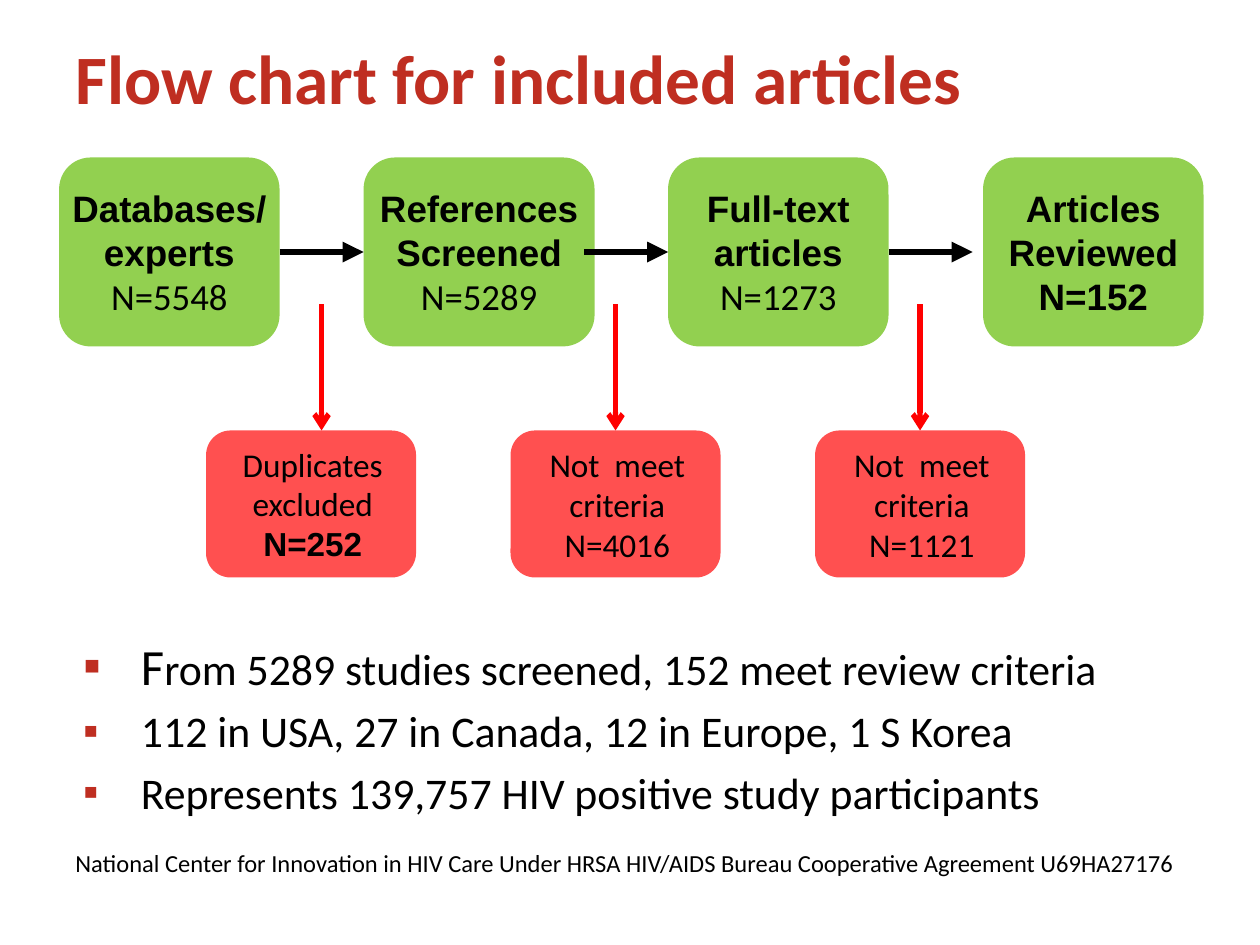
import pptx
import pptx.dml.color
import pptx.enum.shapes
import pptx.enum.text
import pptx.oxml.ns
import pptx.util
from lxml import etree

Pt = pptx.util.Pt
ANCHOR = pptx.enum.text.MSO_ANCHOR
ALIGN = pptx.enum.text.PP_ALIGN
BRAND_RED = "BF2E21"
BLACK = "000000"
STEP = 174


def color(hex_code):
    return pptx.dml.color.RGBColor.from_string(hex_code)


def style_run(run, size, font="Calibri", bold=False, hex_code=BLACK):
    run.font.size = Pt(size)
    run.font.name = font
    run.font.bold = bold
    run.font.color.rgb = color(hex_code)


def add_text_area(slide, box, anchor=ANCHOR.TOP):
    area = slide.shapes.add_textbox(*map(Pt, box))
    frame = area.text_frame
    frame.word_wrap = True
    frame.vertical_anchor = anchor
    return frame


def add_step(slide, box, lines, fill, size, side_inset=2, anchor=ANCHOR.MIDDLE, wrap=True):
    step = slide.shapes.add_shape(
        pptx.enum.shapes.MSO_SHAPE.ROUNDED_RECTANGLE, *map(Pt, box))
    step.shadow.inherit = False
    step.fill.solid()
    step.fill.fore_color.rgb = color(fill)
    step.line.fill.background()
    frame = step.text_frame
    frame.word_wrap = wrap
    frame.vertical_anchor = anchor
    frame.margin_left, frame.margin_right = Pt(side_inset), Pt(2)
    frame.text = "\n".join(text for text, bold in lines)
    for paragraph, (text, bold) in zip(frame.paragraphs, lines):
        paragraph.alignment = ALIGN.CENTER
        style_run(paragraph.runs[0], size, "Arial" if bold else "Calibri", bold)


def add_arrow(slide, start, end, hex_code, width, head):
    arrow = slide.shapes.add_connector(
        pptx.enum.shapes.MSO_CONNECTOR.STRAIGHT, *map(Pt, start + end))
    arrow.line.color.rgb = color(hex_code)
    arrow.line.width = Pt(width)
    qn = pptx.oxml.ns.qn
    etree.SubElement(arrow.line._get_or_add_ln(), qn("a:tailEnd"), type=head)
    etree.SubElement(arrow._element.spPr, qn("a:effectLst"))


def add_title(slide, box):
    frame = add_text_area(slide, box, ANCHOR.BOTTOM)
    frame.margin_bottom = Pt(44)
    frame.text = "Flow chart for included articles"
    style_run(frame.paragraphs[0].runs[0], 39.6, bold=True, hex_code=BRAND_RED)


def add_flow(slide, box):
    left, top, width, height = box
    stages = [
        (0, 126, [("Databases/", True), ("experts", True), ("N=5548", False)]),
        (STEP, 132, [("References", True), ("Screened", True), ("N=5289", False)]),
        (2 * STEP, 126, [("Full-text articles", True), ("N=1273", False)]),
        (width - 126, 126, [("Articles Reviewed N=152", True)]),
    ]
    for index, (offset, stage_width, lines) in enumerate(stages):
        add_step(slide, (left + offset, top, stage_width, 108), lines,
                 "92D050", 21, wrap=index > 0)

    exclusions = [
        ([("Duplicates excluded", False), ("N=252", True)], 150, ANCHOR.TOP),
        ([("Not  meet criteria", False), ("N=4016", False)], 318, ANCHOR.MIDDLE),
        ([("Not  meet criteria", False), ("N=1121", False)], 492, ANCHOR.MIDDLE),
    ]
    exclusion_top = top + height - 84
    for index, (lines, drop, anchor) in enumerate(exclusions):
        offset = left + index * STEP
        add_step(slide, (offset + 84, exclusion_top, 120, 84), lines,
                 "FF5050", 19, 4, anchor)
        add_arrow(slide, (offset + 126, top + 54), (offset + STEP, top + 54),
                  BLACK, 4, "triangle")
        add_arrow(slide, (left + drop, top + 84), (left + drop, exclusion_top),
                  "FF0000", 3, "arrow")


def add_findings(slide, box):
    findings = [
        ["F", "rom 5289 studies screened, 152 meet review criteria"],
        ["112 in USA, 27 in Canada, 12 in Europe, 1 S Korea"],
        ["Represents 139,757 HIV positive study participants"],
    ]
    frame = add_text_area(slide, box)
    qn = pptx.oxml.ns.qn
    for index, parts in enumerate(findings):
        finding = frame.paragraphs[0] if index == 0 else frame.add_paragraph()
        finding.space_before = Pt(5 if index else 0)
        for part in parts:
            run = finding.add_run()
            run.text = part
            style_run(run, 29 if part == "F" else 25)
        properties = finding._p.get_or_add_pPr()
        properties.set("marL", str(Pt(33)))
        properties.set("indent", str(-Pt(33)))
        bullet_color = etree.SubElement(properties, qn("a:buClr"))
        etree.SubElement(bullet_color, qn("a:srgbClr"), val=BRAND_RED)
        etree.SubElement(properties, qn("a:buFont"), typeface="Arial")
        etree.SubElement(properties, qn("a:buChar"), char="▪")


def add_credit(slide, box):
    frame = add_text_area(slide, box)
    frame.margin_top = Pt(25)
    frame.text = ("National Center for Innovation in HIV Care Under HRSA HIV/AIDS Bureau "
                  "Cooperative Agreement U69HA27176")
    style_run(frame.paragraphs[0].runs[0], 14)


def main():
    presentation = pptx.Presentation()
    presentation.slide_width, presentation.slide_height = Pt(720), Pt(540)
    slide = presentation.slides.add_slide(presentation.slide_layouts[6])
    add_credit(slide, (36, 459.5, 648, 46))
    add_flow(slide, (33.75, 90, 654, 240))
    add_title(slide, (36, 21.5, 648, 90))
    add_findings(slide, (40.5, 359, 657, 116))
    presentation.save("out.pptx")


if __name__ == "__main__":
    main()
